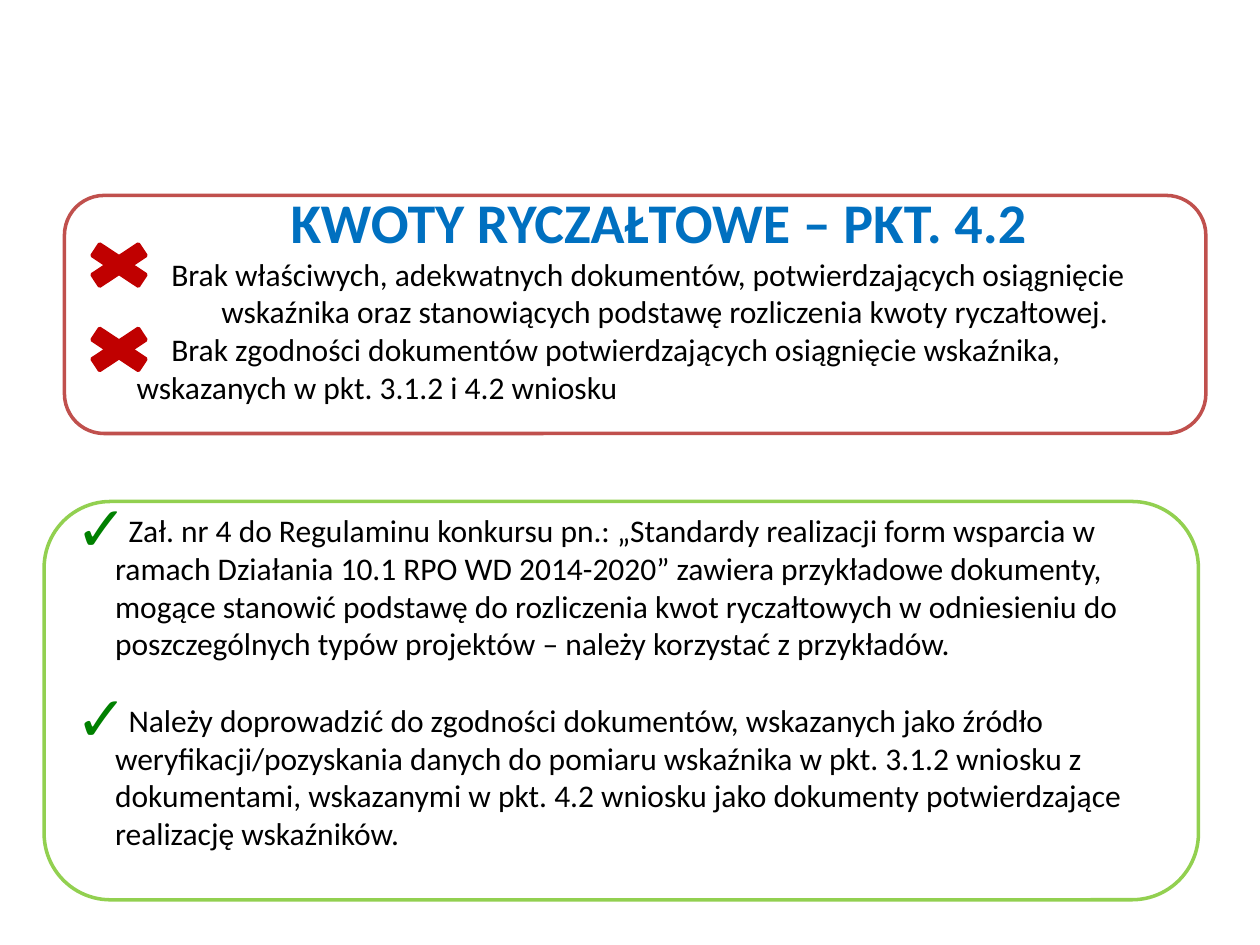
from lxml import etree
from pptx import Presentation
from pptx.dml.color import RGBColor
from pptx.enum.shapes import MSO_SHAPE
from pptx.enum.text import MSO_ANCHOR, MSO_AUTO_SIZE, PP_ALIGN
from pptx.oxml.ns import qn
from pptx.util import Cm, Pt

BLUE = RGBColor(0x00, 0x70, 0xC0)
BLACK = RGBColor(0x00, 0x00, 0x00)
FRAME_RED = RGBColor(0xC0, 0x50, 0x4D)
CROSS_RED = RGBColor(0xC0, 0x00, 0x00)
FRAME_GREEN = RGBColor(0x92, 0xD0, 0x50)
TICK_GREEN = RGBColor(0x00, 0x80, 0x00)

TITLE_FONT = {"name": "Calibri", "size": Pt(32), "bold": True}
BODY_FONT = {"name": "Calibri", "size": Pt(18), "bold": False}

TITLE = "KWOTY RYCZAŁTOWE – PKT. 4.2"
# Each error: text, left margin and first-line indent in cm
ERRORS = [
    ("Brak właściwych, adekwatnych dokumentów, potwierdzających osiągnięcie "
     "wskaźnika oraz stanowiących podstawę rozliczenia kwoty ryczałtowej.", 2.68, -1.01),
    ("Brak zgodności dokumentów potwierdzających osiągnięcie wskaźnika, "
     "wskazanych w pkt. 3.1.2 i 4.2 wniosku", 0.97, 0.7),
]
ADVICE = [
    "Zał. nr 4 do Regulaminu konkursu pn.: „Standardy realizacji form wsparcia w "
    "ramach Działania 10.1 RPO WD 2014-2020” zawiera przykładowe dokumenty, "
    "mogące stanowić podstawę do rozliczenia kwot ryczałtowych w odniesieniu do "
    "poszczególnych typów projektów – należy korzystać z przykładów.",
    "Należy doprowadzić do zgodności dokumentów, wskazanych jako źródło "
    "weryfikacji/pozyskania danych do pomiaru wskaźnika w pkt. 3.1.2 wniosku z "
    "dokumentami, wskazanymi w pkt. 4.2 wniosku jako dokumenty potwierdzające "
    "realizację wskaźników.",
]


def set_values(target, values):
    for name, value in values.items():
        setattr(target, name, value)


def place(shape, left, top, width, height):
    set_values(shape, {"left": Cm(left), "top": Cm(top),
                       "width": Cm(width), "height": Cm(height)})


def set_frame(shape, anchor, left=0, top=0, right=0, bottom=0):
    set_values(shape.text_frame, {
        "word_wrap": True, "auto_size": MSO_AUTO_SIZE.NONE, "vertical_anchor": anchor,
        "margin_left": Cm(left), "margin_top": Cm(top),
        "margin_right": Cm(right), "margin_bottom": Cm(bottom)})


def write(para, text, font, color):
    span = para.add_run()
    span.text = text
    set_values(span.font, font)
    span.font.color.rgb = color


def round_outline(holder, color):
    """Give a placeholder a rounded outline without fill."""
    geometry = etree.SubElement(holder._element.spPr, qn("a:prstGeom"), prst="roundRect")
    etree.SubElement(geometry, qn("a:avLst"))
    holder.fill.background()
    holder.line.color.rgb = color
    holder.line.width = Pt(2)


def add_item(holder, index, text, margin, indent, tick=False, space=0):
    """Write one list item, with a green tick or without a bullet."""
    frame = holder.text_frame
    para = frame.add_paragraph() if index else frame.paragraphs[0]
    properties = para._p.get_or_add_pPr()
    properties.set("marL", str(Cm(margin)))
    properties.set("indent", str(Cm(indent)))
    if tick:
        color = etree.SubElement(properties, qn("a:buClr"))
        etree.SubElement(color, qn("a:srgbClr"), val=str(TICK_GREEN))
        etree.SubElement(properties, qn("a:buSzPct"), val="200000")
        etree.SubElement(properties, qn("a:buChar"), char="✓")
    else:
        etree.SubElement(properties, qn("a:buNone"))
    set_values(para, {"alignment": PP_ALIGN.LEFT, "space_before": Pt(space if index else 0)})
    write(para, text, BODY_FONT, BLACK)


def add_cross(page, left, top):
    cross = page.shapes.add_shape(MSO_SHAPE.MATH_MULTIPLY, Cm(left), Cm(top), Cm(1.8), Cm(1.19))
    cross.shadow.inherit = False
    cross.fill.solid()
    cross.fill.fore_color.rgb = CROSS_RED
    cross.line.color.rgb = CROSS_RED
    cross.line.width = Pt(2)


def build_errors(page, title, holder, left, top, width, height):
    place(title, left + 1.11, top - 0.16, width - 1.27, 1.37)
    set_frame(title, MSO_ANCHOR.MIDDLE)
    para = title.text_frame.paragraphs[0]
    para.alignment = PP_ALIGN.CENTER
    write(para, TITLE, TITLE_FONT, BLUE)

    place(holder, left, top, width, height)
    round_outline(holder, FRAME_RED)
    set_frame(holder, MSO_ANCHOR.TOP, left=0.25, top=0.96, right=0.25)
    for index, (text, margin, indent) in enumerate(ERRORS):
        add_item(holder, index, text, margin, indent)
        add_cross(page, left + 0.2, top + 0.81 + 1.7 * index)


def build_advice(holder, left, top, width, height):
    place(holder, left, top, width, height)
    round_outline(holder, FRAME_GREEN)
    set_frame(holder, MSO_ANCHOR.MIDDLE, left=0.25, right=0.25, bottom=0.77)
    for index, text in enumerate(ADVICE):
        add_item(holder, index, text, 0.79, -0.79, tick=True, space=22)


def main():
    deck = Presentation()
    deck.slide_width, deck.slide_height = Cm(25.4), Cm(19.05)
    layout = deck.slide_layouts.get_by_name("Two Content")
    page = deck.slides.add_slide(layout)
    title, errors, advice = page.placeholders
    build_errors(page, title, errors, 1.3, 3.94, 23.01, 4.8)
    build_advice(advice, 0.89, 10.11, 23.27, 8.03)
    deck.save("out.pptx")


if __name__ == "__main__":
    main()
